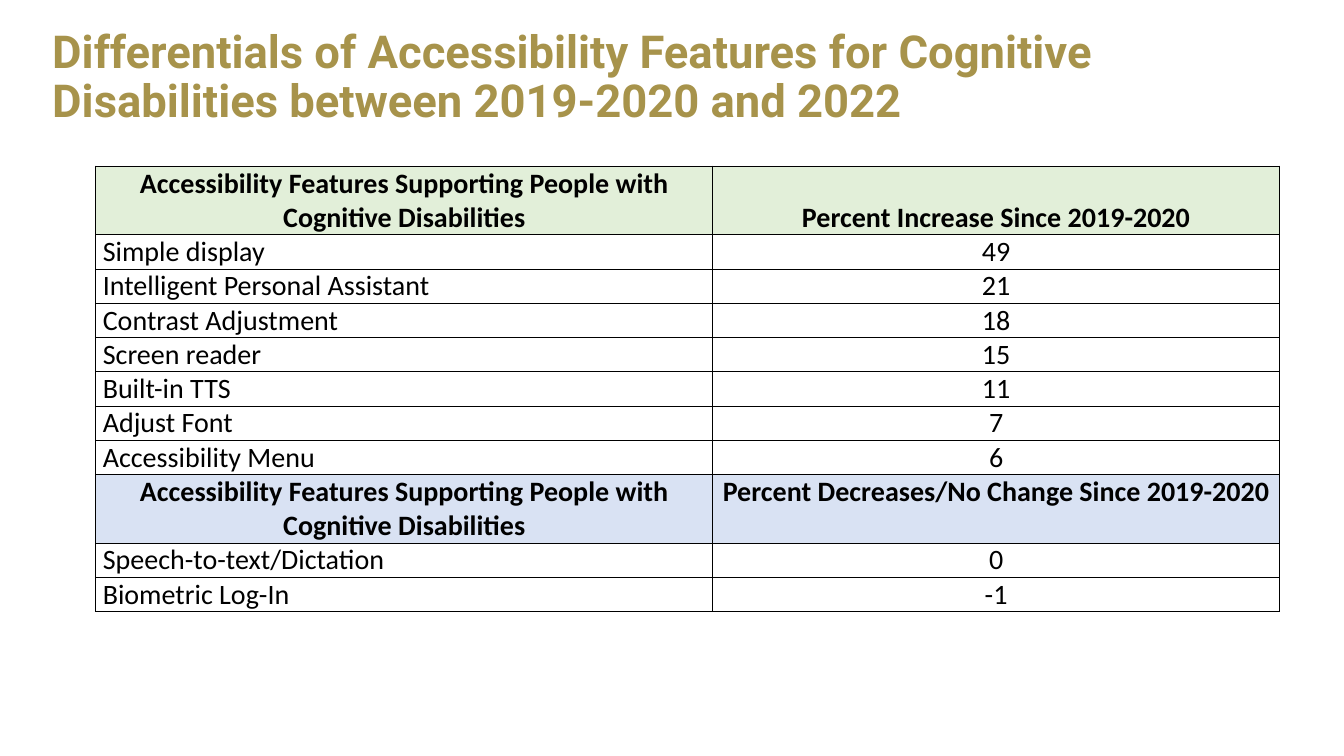
from lxml import etree
from pptx import Presentation
from pptx.dml import color
from pptx.enum import text
from pptx.oxml import ns
from pptx.util import Inches, Pt

HEAD = "Accessibility Features Supporting People with Cognitive Disabilities"
GREEN, BLUE = "E2EFD9", "D9E2F3"
TOP, MID, LOW = text.MSO_ANCHOR.TOP, text.MSO_ANCHOR.MIDDLE, text.MSO_ANCHOR.BOTTOM
LEFT, CENTER = text.PP_ALIGN.LEFT, text.PP_ALIGN.CENTER
ROWS = [
    (HEAD, "Percent Increase Since 2019-2020", GREEN, LOW),
    ("Simple display", "49"),
    ("Intelligent Personal Assistant", "21"),
    ("Contrast Adjustment", "18"),
    ("Screen reader", "15"),
    ("Built-in TTS", "11"),
    ("Adjust Font", "7"),
    ("Accessibility Menu", "6"),
    (HEAD, "Percent Decreases/No Change Since 2019-2020", BLUE, TOP),
    ("Speech-to-text/Dictation", "0"),
    ("Biometric Log-In", "-1"),
]


def rgb(code):
    return color.RGBColor.from_string(code)


def write(frame, words, size=20, face="Calibri", ink="000000", bold=False,
          align=LEFT, space=1.0):
    frame.word_wrap = True
    para = frame.paragraphs[0]
    para.alignment = align
    para.line_spacing = space
    run = para.add_run()
    run.text = words
    font = run.font
    font.size, font.name, font.bold = Pt(size), face, bold
    font.color.rgb = rgb(ink)


def title(slide, words):
    box = slide.shapes.add_textbox(Inches(0.42), Inches(0.22), Inches(12.5), Inches(1.11))
    box.text_frame.vertical_anchor = MID
    write(box.text_frame, words, size=32.4, face="Roboto", ink="A7934B",
          bold=True, space=0.9)


def border(cell):
    props = cell._tc.get_or_add_tcPr()
    for side in ("lnL", "lnR", "lnT", "lnB"):
        line = etree.SubElement(props, ns.qn("a:" + side), w=str(Pt(1)))
        fill = etree.SubElement(line, ns.qn("a:solidFill"))
        etree.SubElement(fill, ns.qn("a:srgbClr"), val="000000")


def fill_cell(cell, words, shade, anchor, **form):
    cell.margin_left = cell.margin_right = Inches(0.07)
    cell.margin_top = cell.margin_bottom = 0
    cell.vertical_anchor = anchor
    border(cell)
    if shade:
        cell.fill.solid()
        cell.fill.fore_color.rgb = rgb(shade)
    else:
        cell.fill.background()
    write(cell.text_frame, words, bold=bool(shade), **form)


def grid(slide, rows):
    frame = slide.shapes.add_table(len(rows), 2, Inches(0.95), Inches(1.65),
                                   Inches(11.74), Inches(4.42))
    table = frame.table
    table.first_row = table.horz_banding = False
    for col, width in zip(table.columns, (6.12, 5.62)):
        col.width = Inches(width)
    for i, (name, value, *look) in enumerate(rows):
        shade, anchor = look or (None, LOW)
        table.rows[i].height = Inches(0.68 if shade else 0.34)
        fill_cell(table.cell(i, 0), name, shade, TOP, align=CENTER if shade else LEFT)
        fill_cell(table.cell(i, 1), value, shade, anchor, align=CENTER)


def main():
    deck = Presentation()
    deck.slide_width, deck.slide_height = Inches(13.33), Inches(7.5)
    slide = deck.slides.add_slide(deck.slide_layouts[6])
    title(slide, "Differentials of Accessibility Features for Cognitive "
                 "Disabilities between 2019-2020 and 2022")
    grid(slide, ROWS)
    deck.save("out.pptx")


if __name__ == "__main__":
    main()
